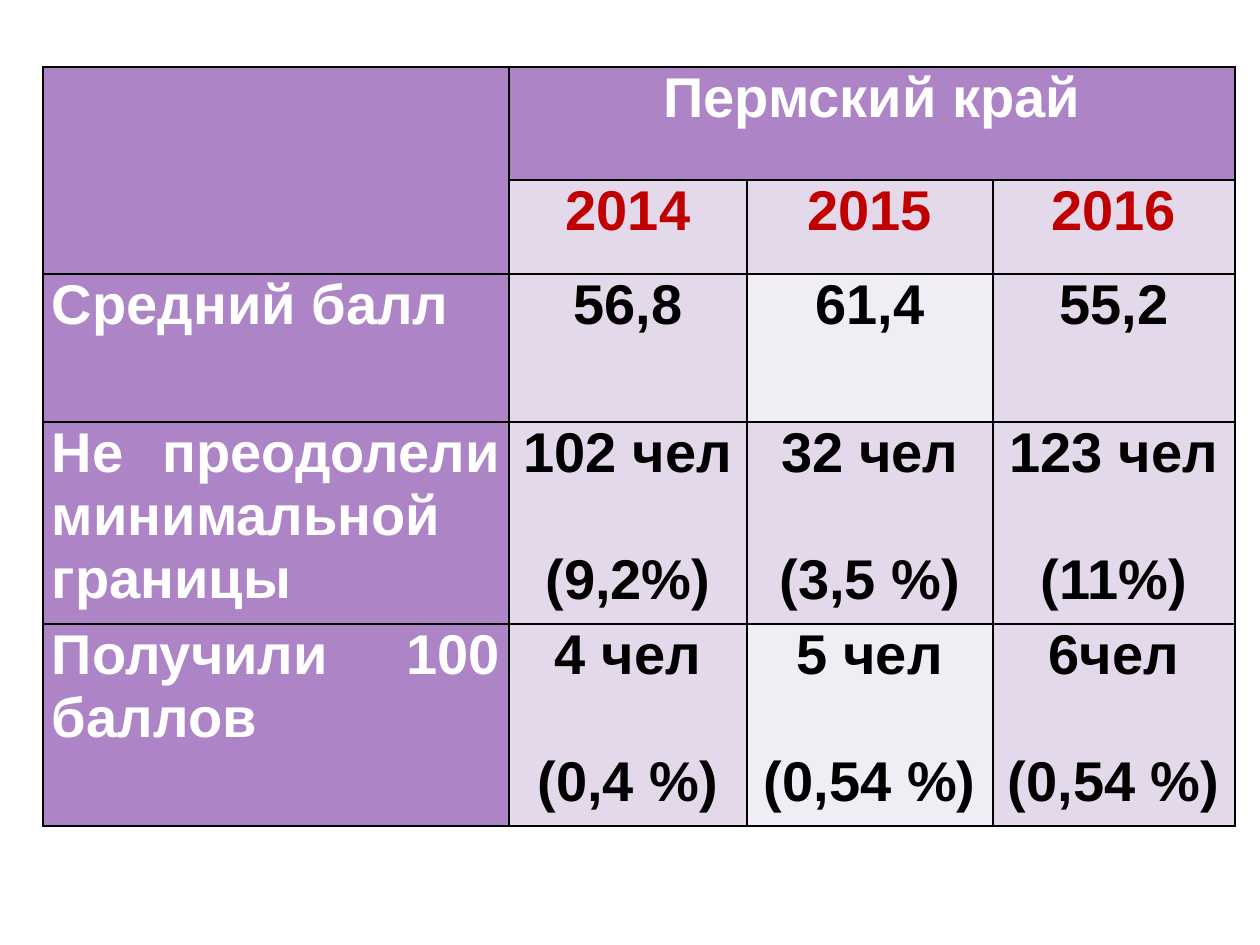
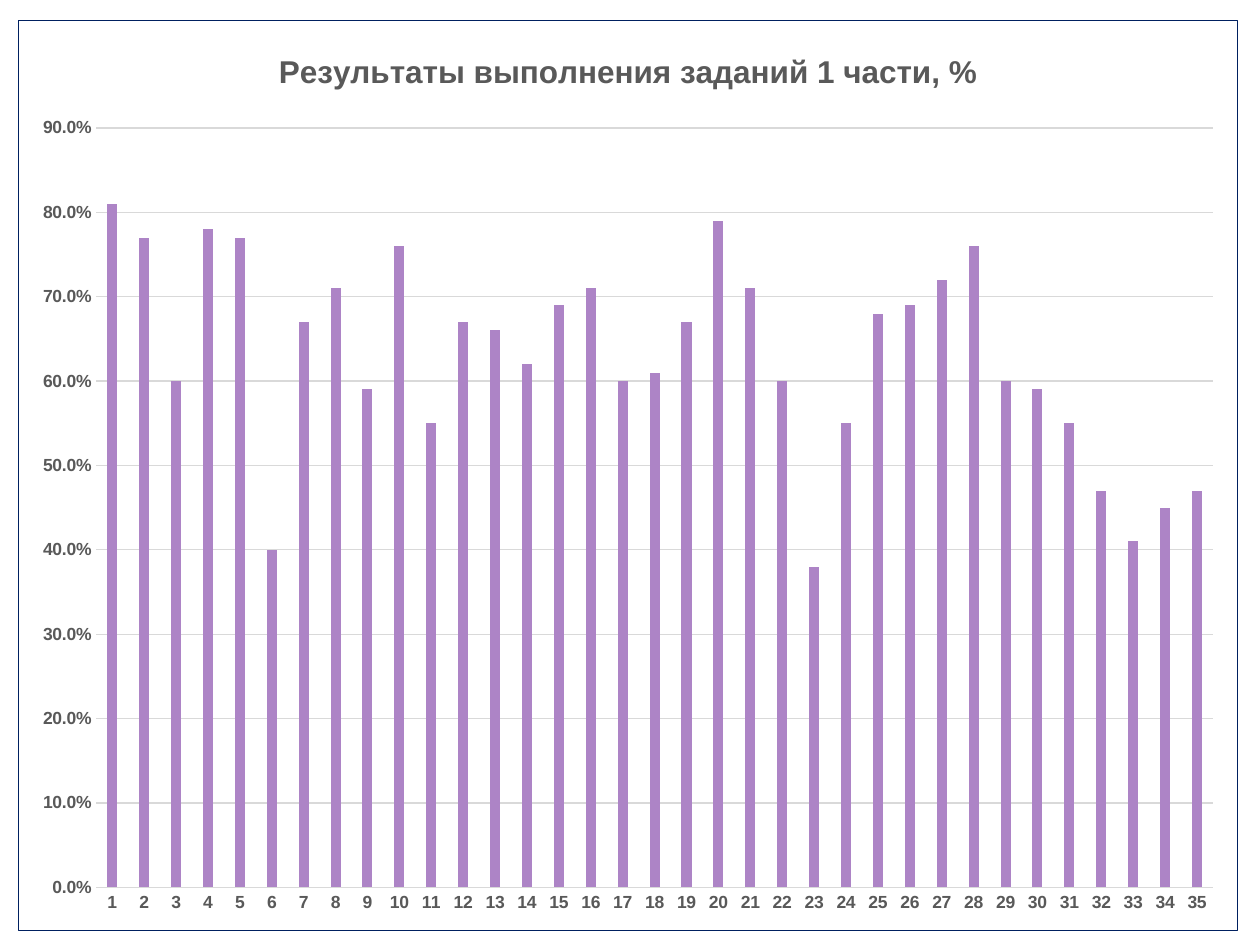
"""Build two slides of exam results: a summary table and a task chart."""
from lxml.etree import fromstring
from pptx import Presentation
from pptx.chart.data import CategoryChartData
from pptx.dml.color import RGBColor
from pptx.enum.chart import XL_CHART_TYPE, XL_TICK_MARK
from pptx.enum.text import PP_ALIGN
from pptx.oxml import parse_xml
from pptx.oxml.ns import nsdecls
from pptx.util import Pt

PX = 914400 // 126
FONT = "Arial"
PURPLE, LILAC, PALE = "AD84C6", "E3D9EA", "F1EDF5"
WHITE, BLACK, RED = "FFFFFF", "000000", "C00000"
GRAY, GRID, NAVY = "595959", "D9D9D9", "002060"


def style(font, size, color, bold=True):
    font.name, font.size, font.bold = FONT, Pt(size), bold
    font.color.rgb = RGBColor.from_string(color)


def write(frame, text, size=32, color=BLACK, align=PP_ALIGN.CENTER, gap=0):
    frame.text = text
    for index, paragraph in enumerate(frame.paragraphs):
        paragraph.alignment = align
        paragraph.space_before = Pt(gap if index else 0)
        for run in paragraph.runs:
            style(run.font, size, color)


prs = Presentation()
prs.slide_width, prs.slide_height = 1260 * PX, 945 * PX
blank = prs.slide_layouts[6]

column_widths = [466, 238, 246, 242]
row_heights = [113, 94, 148, 202, 202]
rows = [
    ["", "Пермский край", "", ""],
    ["", "2014", "2015", "2016"],
    ["Средний балл", "56,8", "61,4", "55,2"],
    ["Не преодолели минимальной границы",
     "102 чел\n(9,2%)", "32 чел\n(3,5 %)", "123 чел\n(11%)"],
    ["Получили 100 баллов",
     "4 чел\n(0,4 %)", "5 чел\n(0,54 %)", "6чел\n(0,54 %)"],
]
pale_cells = {(2, 2), (4, 2)}

summary_slide = prs.slides.add_slide(blank)
summary = summary_slide.shapes.add_table(
    len(rows), len(column_widths), 43 * PX, 67 * PX,
    sum(column_widths) * PX, sum(row_heights) * PX).table
summary.first_row = summary.horz_banding = False
for column, width in zip(summary.columns, column_widths):
    column.width = width * PX
for row, height in zip(summary.rows, row_heights):
    row.height = height * PX

for r, texts in enumerate(rows):
    for c, text in enumerate(texts):
        cell = summary.cell(r, c)
        cell.margin_left = cell.margin_right = 9 * PX
        cell.margin_top = cell.margin_bottom = 0
        for side in "LRTB":
            cell._tc.get_or_add_tcPr().append(fromstring(
                f'<a:ln{side} {nsdecls("a")} w="12700"><a:solidFill>'
                f'<a:srgbClr val="{BLACK}"/></a:solidFill></a:ln{side}>'))
        heading = r == 0 or c == 0
        fill = PURPLE if heading else PALE if (r, c) in pale_cells else LILAC
        cell.fill.solid()
        cell.fill.fore_color.rgb = RGBColor.from_string(fill)
        if text:
            write(cell.text_frame, text, gap=36.8,
                  color=WHITE if heading else RED if r == 1 else BLACK,
                  align=PP_ALIGN.JUSTIFY if c == 0 else PP_ALIGN.CENTER)
summary.cell(0, 0).merge(summary.cell(1, 0))
summary.cell(0, 1).merge(summary.cell(0, 3))

task_scores = [
    0.81, 0.77, 0.6, 0.78, 0.77, 0.4, 0.67, 0.71, 0.59, 0.76,
    0.55, 0.67, 0.66, 0.62, 0.69, 0.71, 0.6, 0.61, 0.67, 0.79,
    0.71, 0.6, 0.38, 0.55, 0.68, 0.69, 0.72, 0.76, 0.6, 0.59,
    0.55, 0.47, 0.41, 0.45, 0.47]
score_data = CategoryChartData(number_format="0.0%")
score_data.categories = [str(n + 1) for n in range(len(task_scores))]
score_data.add_series("Series 1", task_scores)

tasks_slide = prs.slides.add_slide(blank)
scores = tasks_slide.shapes.add_chart(
    XL_CHART_TYPE.COLUMN_CLUSTERED,
    18 * PX, 20 * PX, 1220 * PX, 911 * PX, score_data).chart
style(scores.font, 10, BLACK, bold=False)
scores.has_legend = False
scores.has_title = True
write(scores.chart_title.text_frame,
      "Результаты выполнения заданий 1 части, %", size=18, color=GRAY)
scores.chart_title.include_in_layout = False

bars = scores.plots[0]
bars.vary_by_categories = False
bars.gap_width, bars.overlap = 219, -27
bars.series[0].format.fill.solid()
bars.series[0].format.fill.fore_color.rgb = RGBColor.from_string(PURPLE)

task_axis, score_axis = scores.category_axis, scores.value_axis
for axis in (task_axis, score_axis):
    style(axis.tick_labels.font, 10, GRAY)
    axis.major_tick_mark = axis.minor_tick_mark = XL_TICK_MARK.NONE
score_axis.minimum_scale, score_axis.maximum_scale = 0, 0.9
score_axis.major_unit = 0.1
score_axis.tick_labels.number_format = "0.0%"
score_axis.tick_labels.number_format_is_linked = False
score_axis.format.line.fill.background()
for line in (task_axis.format.line, score_axis.major_gridlines.format.line):
    line.width = Pt(0.75)
    line.color.rgb = RGBColor.from_string(GRID)

frame_format = parse_xml(
    f'<c:spPr {nsdecls("c", "a")}>'
    f'<a:solidFill><a:srgbClr val="{WHITE}"/></a:solidFill>'
    f'<a:ln w="9525"><a:solidFill><a:srgbClr val="{NAVY}"/></a:solidFill></a:ln>'
    '</c:spPr>')
scores._chartSpace.chart.addnext(frame_format)

prs.save("out.pptx")
